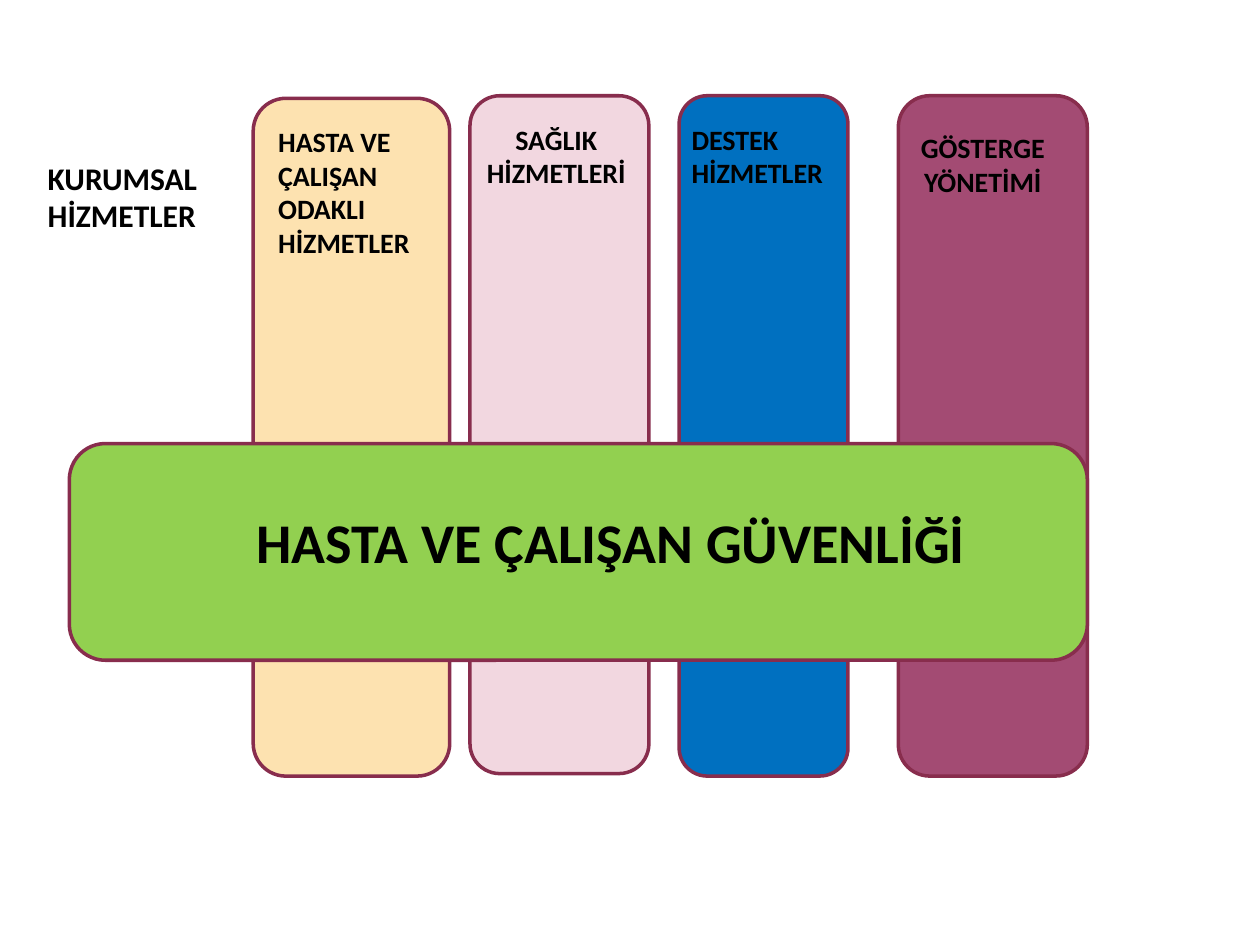
from pptx import Presentation
from pptx.dml.color import RGBColor
from pptx.enum import shapes, text
from pptx.util import Inches, Pt

BLACK = RGBColor(0x00, 0x00, 0x00)
PLUM = RGBColor(0x88, 0x2D, 0x4D)
CREAM = RGBColor(0xFD, 0xE2, 0xB0)
PINK = RGBColor(0xF2, 0xD7, 0xE0)
BLUE = RGBColor(0x00, 0x70, 0xC0)
MAUVE = RGBColor(0xA3, 0x4B, 0x73)
GREEN = RGBColor(0x92, 0xD0, 0x50)

LEFT, CENTER = text.PP_ALIGN.LEFT, text.PP_ALIGN.CENTER

PILLARS = [
    ((2.01, 0.78, 1.56, 5.38), CREAM, (0.10, 0.16, 1.64, 1.18), LEFT,
     ["HASTA VE ÇALIŞAN", "ODAKLI HİZMETLER"]),
    ((3.73, 0.76, 1.42, 5.38), PINK, (0.02, 0.16, 1.33, 0.64), CENTER,
     ["SAĞLIK HİZMETLERİ"]),
    ((5.39, 0.76, 1.34, 5.40), BLUE, (0, 0.16, 1.87, 0.64), LEFT,
     ["DESTEK HİZMETLER"]),
    ((7.13, 0.76, 1.50, 5.40), MAUVE, (0, 0.23, 1.34, 0.64), CENTER,
     ["GÖSTERGE YÖNETİMİ"]),
]


def add_panel(page, box, color):
    """Draw a rounded, outlined panel in the given box."""
    panel = page.shapes.add_shape(
        shapes.MSO_SHAPE.ROUNDED_RECTANGLE, *map(Inches, box))
    panel.shadow.inherit = False
    panel.fill.solid()
    panel.fill.fore_color.rgb = color
    panel.line.color.rgb = PLUM
    panel.line.width = Pt(2)


def add_label(page, box, lines, size, align=LEFT):
    """Write bold paragraphs in a wrapping text box."""
    frame = page.shapes.add_textbox(*map(Inches, box)).text_frame
    frame.word_wrap = True
    frame.auto_size = text.MSO_AUTO_SIZE.SHAPE_TO_FIT_TEXT
    frame.text = "\n".join(lines)
    font_format = {"name": "Calibri", "size": Pt(size), "bold": True}
    for para in frame.paragraphs:
        para.alignment = align
        for span in para.runs:
            for key, value in font_format.items():
                setattr(span.font, key, value)
            span.font.color.rgb = BLACK


def add_titled_panel(page, box, color, label_box, lines, size, align):
    """Draw a panel with a label offset from its top-left corner."""
    left, top = box[:2]
    dx, dy, width, height = label_box
    add_panel(page, box, color)
    add_label(page, (left + dx, top + dy, width, height), lines, size, align)


def main():
    """Build the service pillars slide."""
    deck = Presentation()
    deck.slide_width, deck.slide_height = Inches(10), Inches(7.5)
    page = deck.slides.add_slide(deck.slide_layouts[6])
    for box, color, label_box, align, lines in PILLARS:
        add_titled_panel(page, box, color, label_box, lines, 16, align)
    add_label(page, (0.28, 1.21, 1.42, 0.71), ["KURUMSAL HİZMETLER"], 18)
    add_titled_panel(page, (0.55, 3.52, 8.08, 1.72), GREEN,
                     (0.86, 0.46, 6.88, 0.64),
                     ["HASTA VE ÇALIŞAN GÜVENLİĞİ"], 32, CENTER)
    deck.save("out.pptx")


if __name__ == "__main__":
    main()
